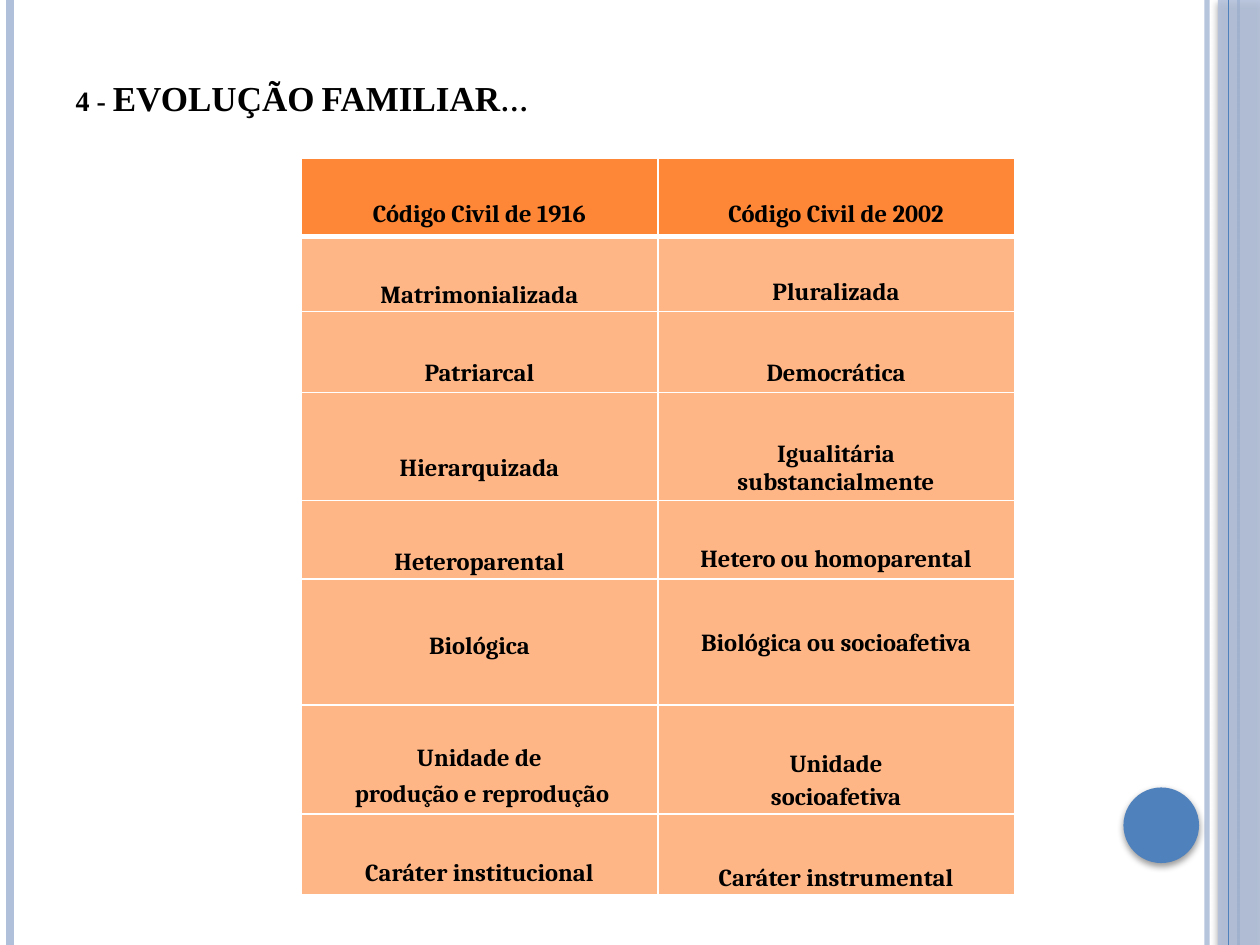
from typing import NamedTuple

from lxml.etree import SubElement
from pptx import Presentation
from pptx.dml.color import RGBColor
from pptx.enum.shapes import MSO_CONNECTOR, MSO_SHAPE
from pptx.enum.text import MSO_ANCHOR, MSO_AUTO_SIZE, PP_ALIGN
from pptx.oxml.ns import qn
from pptx.util import Pt

BLACK = RGBColor(0x00, 0x00, 0x00)
WHITE = RGBColor(0xFF, 0xFF, 0xFF)
BLUE = RGBColor(0x4F, 0x81, 0xBD)
PALE_BLUE = RGBColor(0xB1, 0xC0, 0xDA)
ORANGE = RGBColor(0xFE, 0x87, 0x37)
PALE_ORANGE = RGBColor(0xFE, 0xB6, 0x87)

SLIDE_WIDTH, SLIDE_HEIGHT = 720, 540
TABLE_LEFT, TABLE_TOP, COLUMN_WIDTH = 172.1, 90.7, 203.8
LINE_HEIGHT = 16
THIN_BORDER, HEADER_BORDER = 0.96, 3


class Stripe(NamedTuple):
    x: float
    width: float
    color: RGBColor
    opacity: int = 100


class Entry(NamedTuple):
    lines: list[str]
    top: float
    gap: float = 0


class Row(NamedTuple):
    height: float
    code_1916: Entry
    code_2002: Entry


STRIPES_BEHIND = [
    Stripe(689.8, 3, PALE_BLUE, 93),
    Stripe(5.8, 4.5, PALE_BLUE),
    Stripe(707.8, 1.5, BLUE),
]
STRIPE_IN_FRONT = Stripe(702, 0.75, BLUE)

ROWS = [
    Row(44.3, Entry(["Código Civil de 1916"], 24.2), Entry(["Código Civil de 2002"], 24.2)),
    Row(43.1, Entry(["Matrimonializada"], 26.2), Entry(["Pluralizada"], 24.5)),
    Row(46.3, Entry(["Patriarcal"], 27.7), Entry(["Democrática"], 27.7)),
    Row(61.7, Entry(["Hierarquizada"], 35.7), Entry(["Igualitária", "substancialmente"], 27.7)),
    Row(44.9, Entry(["Heteroparental"], 27.7), Entry(["Hetero ou homoparental"], 25.9)),
    Row(72, Entry(["Biológica"], 30.8), Entry(["Biológica ou socioafetiva"], 29.1)),
    Row(62.3, Entry(["Unidade de", " produção e reprodução"], 22.8, 4.6),
        Entry(["Unidade", "socioafetiva"], 26.2, 2.9)),
    Row(46, Entry(["Caráter institucional"], 26.2), Entry(["Caráter instrumental"], 29.1)),
]


def set_opacity(properties, percent: int) -> None:
    color = next(properties.iter(qn("a:srgbClr")))
    SubElement(color, qn("a:alpha"), val=str(percent * 1000))


def add_stripe(slide, stripe: Stripe) -> None:
    line = slide.shapes.add_connector(
        MSO_CONNECTOR.STRAIGHT, Pt(stripe.x), Pt(0), Pt(stripe.x), Pt(SLIDE_HEIGHT))
    line.line.color.rgb = stripe.color
    line.line.width = Pt(stripe.width)
    properties = line._element.spPr
    if stripe.opacity < 100:
        set_opacity(properties, stripe.opacity)
    SubElement(properties, qn("a:effectLst"))


def add_shadowed_shape(slide, kind, left: float, top: float, width: float,
                       height: float, color: RGBColor, opacity: int = 100) -> None:
    shape = slide.shapes.add_shape(kind, Pt(left), Pt(top), Pt(width), Pt(height))
    shape.fill.solid()
    shape.fill.fore_color.rgb = color
    shape.line.fill.background()
    shape.shadow.inherit = False
    properties = shape._element.spPr
    if opacity < 100:
        set_opacity(properties, opacity)
    shadow = SubElement(properties.find(qn("a:effectLst")), qn("a:outerShdw"),
                        blurRad=str(Pt(4)), dist=str(Pt(2)), dir="5400000", rotWithShape="0")
    shadow_color = SubElement(shadow, qn("a:srgbClr"), val=str(BLACK))
    SubElement(shadow_color, qn("a:alpha"), val="40000")


def add_run(paragraph, text: str, font_name: str, size: float):
    run = paragraph.add_run()
    run.text = text
    run.font.name = font_name
    run.font.size = Pt(size)
    run.font.bold = True
    run.font.color.rgb = BLACK
    return run


def fill_title(slide) -> None:
    title = slide.shapes.title
    title.left, title.top, title.width, title.height = Pt(36), Pt(21.6), Pt(587.5), Pt(49.7)
    frame = title.text_frame
    frame.word_wrap = True
    frame.auto_size = MSO_AUTO_SIZE.NONE
    frame.vertical_anchor = MSO_ANCHOR.BOTTOM
    paragraph = frame.paragraphs[0]
    paragraph.alignment = PP_ALIGN.LEFT
    run = add_run(paragraph, "4 - EVOLUÇÃO FAMILIAR…", "Times New Roman", 20)
    run.font._element.set("cap", "small")


def add_borders(cell, row_index: int) -> None:
    """White rules, with a thick one between the header and the body."""
    widths = {
        "a:lnL": THIN_BORDER,
        "a:lnR": THIN_BORDER,
        "a:lnT": HEADER_BORDER if row_index == 1 else THIN_BORDER,
        "a:lnB": HEADER_BORDER if row_index == 0 else THIN_BORDER,
    }
    properties = cell._tc.get_or_add_tcPr()
    for side, width in widths.items():
        border = SubElement(properties, qn(side), w=str(Pt(width)))
        fill = SubElement(border, qn("a:solidFill"))
        SubElement(fill, qn("a:srgbClr"), val=str(WHITE))


def fill_cell(cell, entry: Entry, row_index: int) -> None:
    add_borders(cell, row_index)
    cell.fill.solid()
    cell.fill.fore_color.rgb = ORANGE if row_index == 0 else PALE_ORANGE
    cell.margin_left = cell.margin_right = Pt(5)
    cell.margin_top, cell.margin_bottom = Pt(entry.top), Pt(0)
    cell.vertical_anchor = MSO_ANCHOR.TOP
    frame = cell.text_frame
    for index, text in enumerate(entry.lines):
        paragraph = frame.add_paragraph() if index else frame.paragraphs[0]
        paragraph.alignment = PP_ALIGN.CENTER
        paragraph.line_spacing = Pt(LINE_HEIGHT)
        paragraph.space_before = Pt(entry.gap if index else 0)
        add_run(paragraph, text, "Cambria", 14)


def add_comparison_table(slide) -> None:
    height = sum(row.height for row in ROWS)
    table = slide.shapes.add_table(
        len(ROWS), 2, Pt(TABLE_LEFT), Pt(TABLE_TOP), Pt(2 * COLUMN_WIDTH), Pt(height)).table
    table.horz_banding = False
    for column in table.columns:
        column.width = Pt(COLUMN_WIDTH)
    for row_index, row in enumerate(ROWS):
        table.rows[row_index].height = Pt(row.height)
        for column_index, entry in enumerate((row.code_1916, row.code_2002)):
            fill_cell(table.cell(row_index, column_index), entry, row_index)


def main() -> None:
    presentation = Presentation()
    presentation.slide_width, presentation.slide_height = Pt(SLIDE_WIDTH), Pt(SLIDE_HEIGHT)
    slide = presentation.slides.add_slide(presentation.slide_layouts[5])
    for stripe in STRIPES_BEHIND:
        add_stripe(slide, stripe)
    add_shadowed_shape(slide, MSO_SHAPE.RECTANGLE, 696, 0, 24, SLIDE_HEIGHT, PALE_BLUE, 87)
    add_stripe(slide, STRIPE_IN_FRONT)
    add_shadowed_shape(slide, MSO_SHAPE.OVAL, 642, 450, 43.2, 43.2, BLUE)
    fill_title(slide)
    add_comparison_table(slide)
    presentation.save("out.pptx")


if __name__ == "__main__":
    main()
